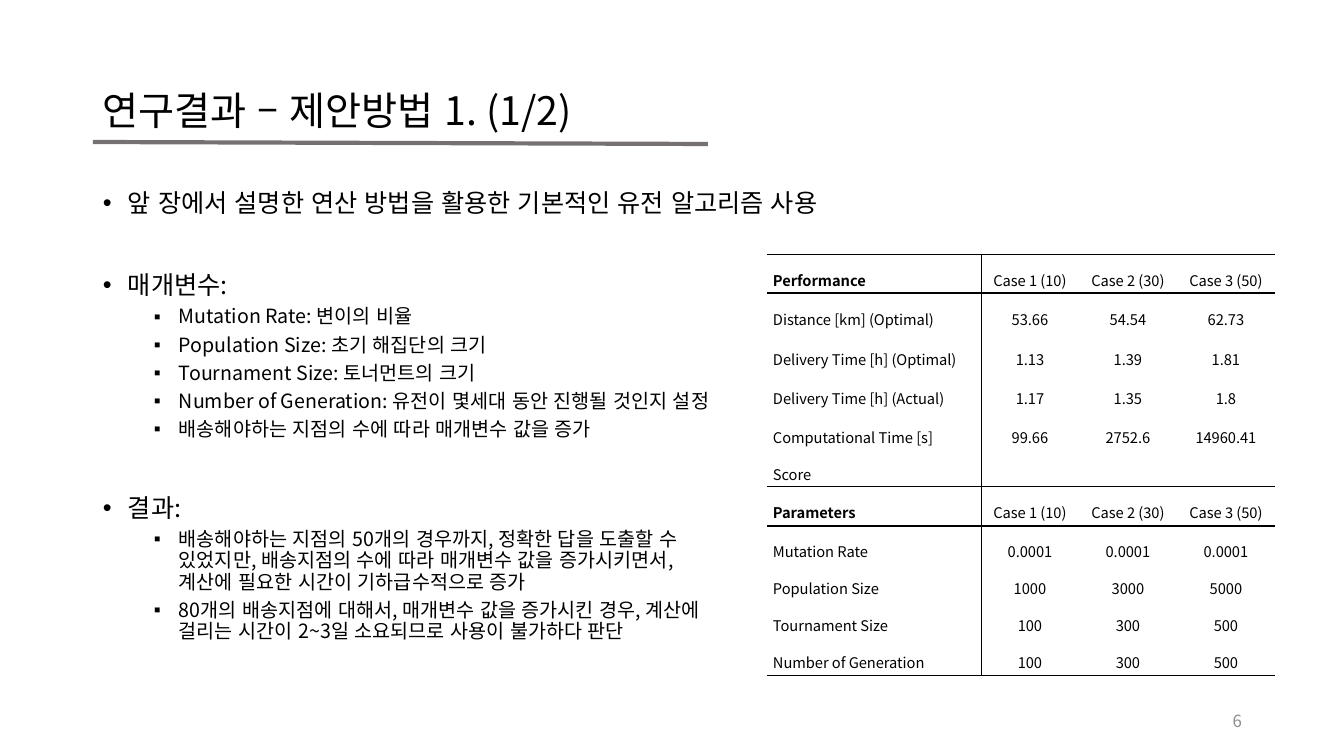
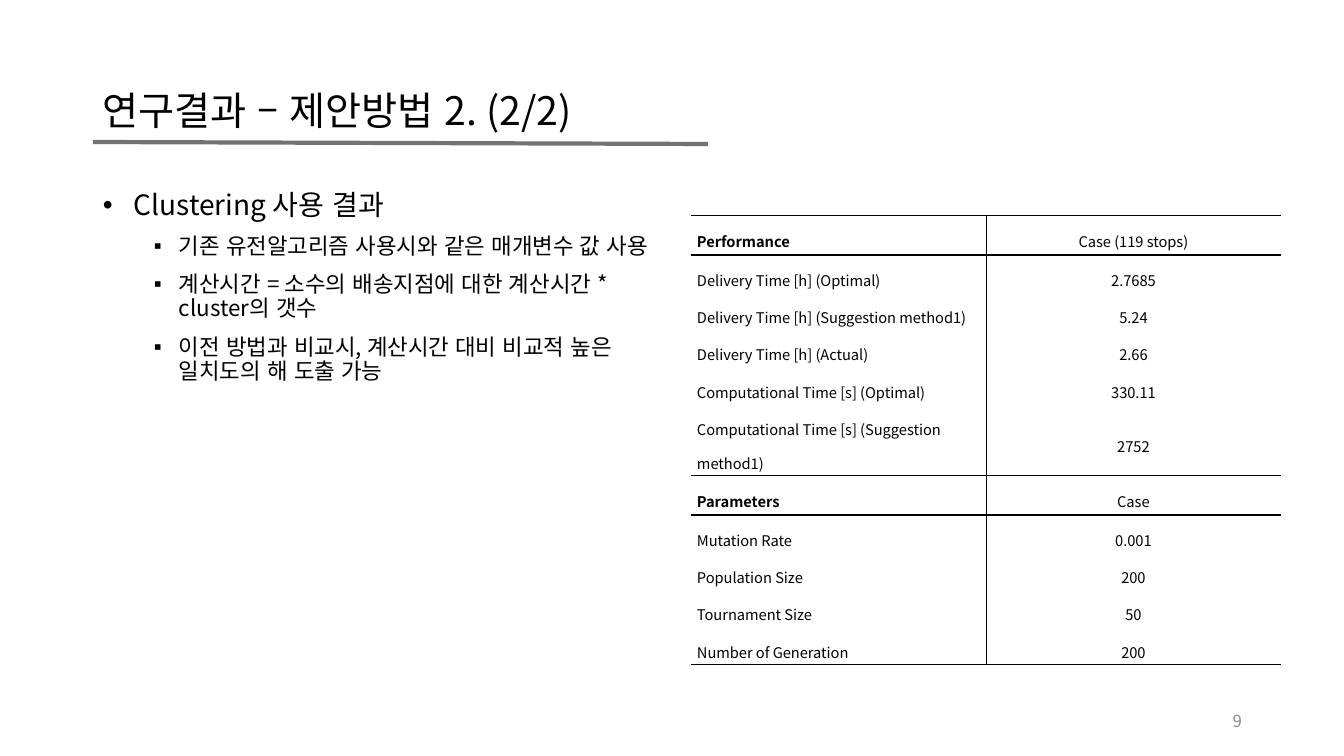
from lxml.etree import SubElement
from pptx import Presentation
from pptx.dml.color import RGBColor
from pptx.enum.lang import MSO_LANGUAGE_ID
from pptx.enum.shapes import MSO_CONNECTOR
from pptx.enum.text import MSO_ANCHOR, PP_ALIGN
from pptx.oxml import parse_xml
from pptx.oxml.ns import nsdecls, qn
from pptx.util import Pt

# Content: bullets are (level, text, size, space before)
RESULT_1 = {
    "title": "연구결과 – 제안방법 1. (1/2)",
    "number": "6",
    "body_width": 1150,
    "bullet_indent": 25,
    "bullets": [
        (0, "앞 장에서 설명한 연산 방법을 활용한 기본적인 유전 알고리즘 사용", 18, 0),
        (0, "매개변수:", 18, 39),
        (1, "Mutation Rate: 변이의 비율", 14, 5),
        (1, "Population Size: 초기 해집단의 크기", 14, 5),
        (1, "Tournament Size: 토너먼트의 크기", 14, 5),
        (1, "Number of Generation: 유전이 몇세대 동안 진행될 것인지 설정", 14, 5),
        (1, "배송해야하는 지점의 수에 따라 매개변수 값을 증가", 14, 5),
        (0, "결과:", 18, 39),
        (1, "배송해야하는 지점의 50개의 경우까지, 정확한 답을 도출할 수\n"
            "있었지만, 배송지점의 수에 따라 매개변수 값을 증가시키면서,\n"
            "계산에 필요한 시간이 기하급수적으로 증가", 14, 5),
        (1, "80개의 배송지점에 대해서, 매개변수 값을 증가시킨 경우, 계산에\n"
            "걸리는 시간이 2~3일 소요되므로 사용이 불가하다 판단", 14, 5),
    ],
    "table_at": (767, 254),
    "columns": [214, 98, 98, 98],
    "row_heights": [39, 40, 39, 40, 37, 37, 40, 37, 37, 37, 38],
    "sections": [
        [
            ("Performance", "Case 1 (10)", "Case 2 (30)", "Case 3 (50)"),
            ("Distance [km] (Optimal)", "53.66", "54.54", "62.73"),
            ("Delivery Time [h] (Optimal)", "1.13", "1.39", "1.81"),
            ("Delivery Time [h] (Actual)", "1.17", "1.35", "1.8"),
            ("Computational Time [s]", "99.66", "2752.6", "14960.41"),
            ("Score", "", "", ""),
        ],
        [
            ("Parameters", "Case 1 (10)", "Case 2 (30)", "Case 3 (50)"),
            ("Mutation Rate", "0.0001", "0.0001", "0.0001"),
            ("Population Size", "1000", "3000", "5000"),
            ("Tournament Size", "100", "300", "500"),
            ("Number of Generation", "100", "300", "500"),
        ],
    ],
}
RESULT_2 = {
    "title": "연구결과 – 제안방법 2. (2/2)",
    "number": "9",
    "body_width": 571,
    "bullet_indent": 31,
    "bullets": [
        (0, "Clustering 사용 결과", 20, 0),
        (1, "기존 유전알고리즘 사용시와 같은 매개변수 값 사용", 16, 10),
        (1, "계산시간 = 소수의 배송지점에 대한 계산시간 * cluster의 갯수", 16, 10),
        (1, "이전 방법과 비교시, 계산시간 대비 비교적 높은 일치도의 해 도출 가능", 16, 10),
    ],
    "table_at": (691, 215),
    "columns": [295, 295],
    "row_heights": [40, 37, 37, 38, 37, 71, 40, 37, 37, 38, 37],
    "sections": [
        [
            ("Performance", "Case (119 stops)"),
            ("Delivery Time [h] (Optimal)", "2.7685"),
            ("Delivery Time [h] (Suggestion method1)", "5.24"),
            ("Delivery Time [h] (Actual)", "2.66"),
            ("Computational Time [s] (Optimal)", "330.11"),
            ("Computational Time [s] (Suggestion method1)", "2752"),
        ],
        [
            ("Parameters", "Case"),
            ("Mutation Rate", "0.001"),
            ("Population Size", "200"),
            ("Tournament Size", "50"),
            ("Number of Generation", "200"),
        ],
    ],
}

# Shared style
FONT = "Noto Sans CJK KR"
BULLET_FONT = "Arial"
BLACK = RGBColor(0x00, 0x00, 0x00)
RULE_GRAY = RGBColor(0x76, 0x71, 0x71)
NUMBER_GRAY = RGBColor(0x8C, 0x8C, 0x8C)
THIN, THICK = Pt(0.28), Pt(1.98)
BULLETS = "•▪"
LEFT = 93


def px(length):
    return round(length * 914400 / 100.8)


def write(paragraph, text, size, color=BLACK, bold=False, align=PP_ALIGN.LEFT,
          spacing=1.0, before=0):
    paragraph.alignment = align
    paragraph.line_spacing = spacing
    paragraph.space_before = Pt(before)
    if not text:
        SubElement(paragraph._p, qn("a:endParaRPr"), sz=str(round(size * 100)))
    for index, line in enumerate(text.split("\n") if text else []):
        if index:
            paragraph.add_line_break()
        run = paragraph.add_run()
        run.text = line
        run.font.size = Pt(size)
        run.font.bold = bold
        run.font.color.rgb = color
        run.font.name = FONT
        run.font.language_id = MSO_LANGUAGE_ID.KOREAN
        SubElement(run._r.get_or_add_rPr(), qn("a:ea"), typeface=FONT)


def add_box(slide, left, top, width, height, anchor):
    frame = slide.shapes.add_textbox(px(left), px(top), px(width), px(height)).text_frame
    frame.word_wrap = True
    frame.vertical_anchor = anchor
    return frame


def add_frame(slide, title, number):
    """Title, rule under it and page number."""
    heading = add_box(slide, LEFT, 40, 1159, 146, MSO_ANCHOR.MIDDLE)
    write(heading.paragraphs[0], title, 28, spacing=0.9)
    rule = slide.shapes.add_connector(
        MSO_CONNECTOR.STRAIGHT, px(LEFT), px(142), px(708), px(144))
    rule.line.color.rgb = RULE_GRAY
    rule.line.width = Pt(3)
    SubElement(rule._element.spPr, qn("a:effectLst"))
    footer = add_box(slide, 950, 701, 302, 40, MSO_ANCHOR.MIDDLE)
    write(footer.paragraphs[0], number, 12, color=NUMBER_GRAY, align=PP_ALIGN.RIGHT)


def add_bullets(slide, bullets, width, bullet_indent):
    body = add_box(slide, LEFT, 186, width, 480, MSO_ANCHOR.TOP)
    for index, (level, text, size, before) in enumerate(bullets):
        paragraph = body.add_paragraph() if index else body.paragraphs[0]
        write(paragraph, text, size, spacing=0.9, before=before)
        properties = paragraph._p.get_or_add_pPr()
        hanging = 25 if level else bullet_indent
        properties.set("marL", str(px(51 * level + hanging)))
        properties.set("indent", str(-px(hanging)))
        SubElement(properties, qn("a:buFont"), typeface=BULLET_FONT)
        SubElement(properties, qn("a:buChar"), char=BULLETS[level])


def set_borders(cell, **widths):
    """Draw the named sides (L, R, T, B) and clear the others."""
    properties = cell._tc.get_or_add_tcPr()
    for position, side in enumerate("LRTB"):
        width = widths.get(side, 0)
        fill = (f'<a:solidFill><a:srgbClr val="{BLACK}"/></a:solidFill>'
                if width else "<a:noFill/>")
        properties.insert(position, parse_xml(
            f'<a:ln{side} {nsdecls("a")} w="{int(width)}">{fill}</a:ln{side}>'))


def add_results_table(slide, at, columns, row_heights, sections):
    left, top = at
    table = slide.shapes.add_table(
        len(row_heights), len(columns), px(left), px(top),
        px(sum(columns)), px(sum(row_heights))).table
    table.first_row = table.horz_banding = False
    for column, width in zip(table.columns, columns):
        column.width = px(width)
    for row, height in zip(table.rows, row_heights):
        row.height = px(height)

    rows = [(index, len(section), values)
            for section in sections for index, values in enumerate(section)]
    for row_index, (index, count, values) in enumerate(rows):
        # Thin rules bound each section, a thick one sits under its header
        horizontal = {}
        if index < 2:
            horizontal["T"] = THICK if index else THIN
        if index in (0, count - 1):
            horizontal["B"] = THIN if index else THICK
        for column_index, value in enumerate(values):
            cell = table.cell(row_index, column_index)
            cell.fill.background()
            cell.vertical_anchor = MSO_ANCHOR.MIDDLE
            cell.margin_left = cell.margin_right = px(6)
            cell.margin_top = cell.margin_bottom = px(2)
            is_label = column_index == 0
            write(cell.text_frame.paragraphs[0], value, 10.5, spacing=1.6,
                  bold=is_label and index == 0,
                  align=PP_ALIGN.LEFT if is_label else PP_ALIGN.CENTER)
            vertical = {0: {"R": THIN}, 1: {"L": THIN}}.get(column_index, {})
            set_borders(cell, **horizontal, **vertical)


def main():
    presentation = Presentation()
    presentation.slide_width, presentation.slide_height = px(1344), px(756)
    for result in (RESULT_1, RESULT_2):
        slide = presentation.slides.add_slide(presentation.slide_layouts[6])
        add_frame(slide, result["title"], result["number"])
        add_bullets(slide, result["bullets"], result["body_width"], result["bullet_indent"])
        add_results_table(slide, result["table_at"], result["columns"],
                          result["row_heights"], result["sections"])
    presentation.save("out.pptx")


if __name__ == "__main__":
    main()
